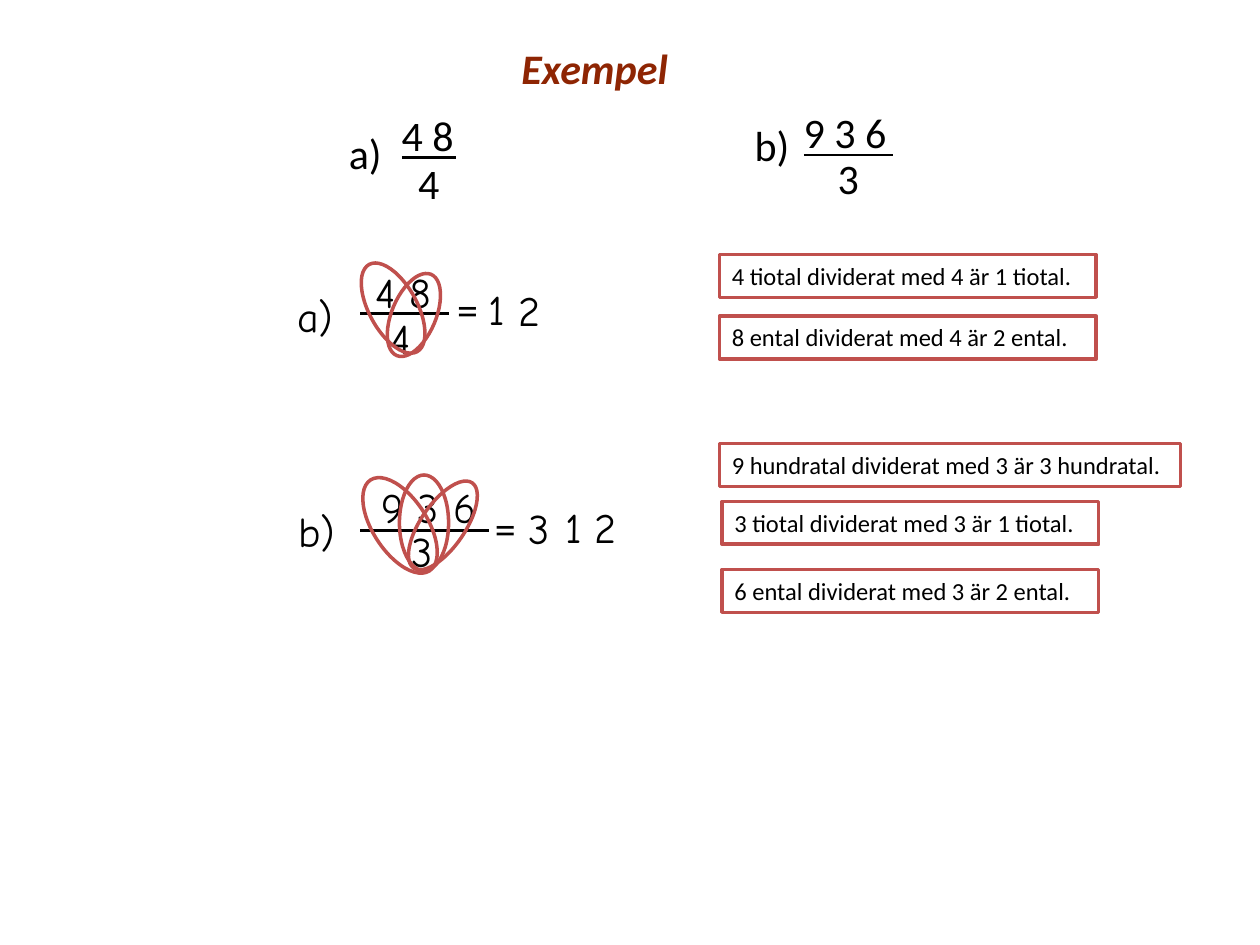
"""Build a slide that explains short division with two worked examples."""
from dataclasses import dataclass

from lxml.etree import SubElement
from pptx import Presentation
from pptx.dml.color import RGBColor as Color
from pptx.enum.shapes import MSO_CONNECTOR as Connector, MSO_SHAPE as Shape
from pptx.enum.text import MSO_ANCHOR as Anchor, MSO_AUTO_SIZE as AutoSize, PP_ALIGN as Align
from pptx.oxml.ns import qn
from pptx.util import Inches, Pt


@dataclass(frozen=True)
class Theme:
    """Colours, fonts and sizes of the slide."""
    ink: Color = Color.from_string("000000")
    paper: Color = Color.from_string("FFFFFF")
    heading: Color = Color.from_string("8E2503")
    accent: Color = Color.from_string("C0504D")
    print_font: str = "Calibri"
    hand_font: str = "Comic Neue"
    large: Pt = Pt(24)
    small: Pt = Pt(14)
    bar: Pt = Pt(1.5)
    outline: Pt = Pt(2)


THEME = Theme()
COLUMNS, ROWS = 100, 75
CELL = Inches(0.1)
TEXT_ROWS, NOTE_ROWS = 5, 3.4
PRINT = {"name": THEME.print_font, "size": THEME.large}
HAND = {"name": THEME.hand_font, "size": THEME.large}
NOTE = {"name": THEME.print_font, "size": THEME.small}
TITLE = {**PRINT, "bold": True, "italic": True}


def cells(*counts):
    """Turn grid counts into lengths."""
    return [round(count * CELL) for count in counts]


def write(box, text, style, color=THEME.ink, wrap=True):
    """Put one styled line of text in a box."""
    frame = box.text_frame
    settings = {"word_wrap": wrap, "auto_size": AutoSize.SHAPE_TO_FIT_TEXT,
                "vertical_anchor": Anchor.TOP}
    for name, value in settings.items():
        setattr(frame, name, value)
    para = frame.paragraphs[0]
    para.alignment = Align.LEFT
    span = para.add_run()
    span.text = text
    for name, value in style.items():
        setattr(span.font, name, value)
    span.font.color.rgb = color


def add_text(shapes, text, column, row, width, style=PRINT, **options):
    """Add a text box one line high."""
    box = shapes.add_textbox(*cells(column, row, width, TEXT_ROWS))
    write(box, text, style, **options)


def add_bar(shapes, column, row, width):
    """Add a horizontal fraction bar."""
    bar = shapes.add_connector(Connector.STRAIGHT, *cells(column, row, column + width, row))
    bar.line.color.rgb = THEME.ink
    bar.line.width = THEME.bar
    SubElement(bar._element.spPr, qn("a:effectLst"))


def add_outlined(shapes, kind, column, row, width, height):
    """Add a shape with the accent outline."""
    shape = shapes.add_shape(kind, *cells(column, row, width, height))
    shape.shadow.inherit = False
    shape.line.color.rgb = THEME.accent
    shape.line.width = THEME.outline
    return shape


def add_loop(shapes, column, row, width, height, angle):
    """Add a tilted ring around a digit and the denominator."""
    loop = add_outlined(shapes, Shape.OVAL, column, row, width, height)
    loop.fill.background()
    loop.rotation = angle


def add_note(shapes, text, column, row, width=29.9):
    """Add a framed explanation."""
    note = add_outlined(shapes, Shape.RECTANGLE, column, row, width, NOTE_ROWS)
    note.fill.solid()
    note.fill.fore_color.rgb = THEME.paper
    write(note, text, NOTE)


def add_fraction(shapes, label, numerator, denominator, bar, style):
    """Add a label, a numerator, a bar and a denominator, each with its place."""
    add_text(shapes, *label, 5.4, style)
    add_text(shapes, *numerator, 11.4, style)
    add_bar(shapes, *bar)
    add_text(shapes, *denominator, style)


def add_answer(shapes, equals, digits):
    """Add the equals sign and the digits of the quotient."""
    add_text(shapes, "=", *equals, 4.6)
    for text, column, row in digits:
        add_text(shapes, text, column, row, 4.6, HAND)


def main():
    """Build and save the slide."""
    deck = Presentation()
    deck.slide_width, deck.slide_height = cells(COLUMNS, ROWS)
    page = deck.slides.add_slide(deck.slide_layouts[6])
    shapes = page.shapes

    add_text(shapes, "Exempel", 40.4, 2.9, 13.7, TITLE, color=THEME.heading, wrap=False)

    add_fraction(shapes.add_group_shape().shapes, ("a)", 26.7, 9.6), ("4 8", 30.9, 8.2),
                 ("4", 32.2, 12, 3.1), (31.9, 12.5, 4.3), PRINT)
    add_fraction(shapes.add_group_shape().shapes, ("b)", 58.9, 9), ("9 3 6", 62.8, 8),
                 ("3", 65.5, 11.6, 3.1), (63.8, 12.3, 7.1), PRINT)
    add_fraction(shapes, ("a)", 22.6, 22.6), ("4 8", 28.8, 20.7),
                 ("4", 30, 24.3, 6.3), (28.6, 24.9, 7), HAND)
    add_fraction(shapes, ("b)", 22.7, 39.6), ("9 3 6", 29.3, 37.7),
                 ("3", 31.7, 41.2, 6.3), (28.6, 42.1, 10.2), HAND)

    add_answer(shapes, (35.3, 22), [("1", 37.8, 22), ("2", 40.2, 22.1)])
    add_answer(shapes, (38.3, 39.4), [("3", 41, 39.4), ("1", 43.9, 39.3), ("2", 46.2, 39.3)])

    for loop in [(29.3, 20.5, 3.8, 7.9, 331.2), (31.1, 21.5, 3.5, 7, 22.9),
                 (29.6, 37.4, 4.3, 8.6, 327), (31.7, 37.7, 3.9, 7.6, 0),
                 (33.4, 37.6, 3.5, 8.2, 34.5)]:
        add_loop(shapes, *loop)

    for note in [("4 tiotal dividerat med 4 är 1 tiotal.", 57.1, 20.2),
                 ("8 ental dividerat med 4 är 2 ental.", 57.1, 25.1),
                 ("9 hundratal dividerat med 3 är 3 hundratal.", 57.1, 35.2, 36.6),
                 ("3 tiotal dividerat med 3 är 1 tiotal.", 57.3, 39.8),
                 ("6 ental dividerat med 3 är 2 ental.", 57.3, 45.2)]:
        add_note(shapes, *note)

    deck.save("out.pptx")


if __name__ == "__main__":
    main()
